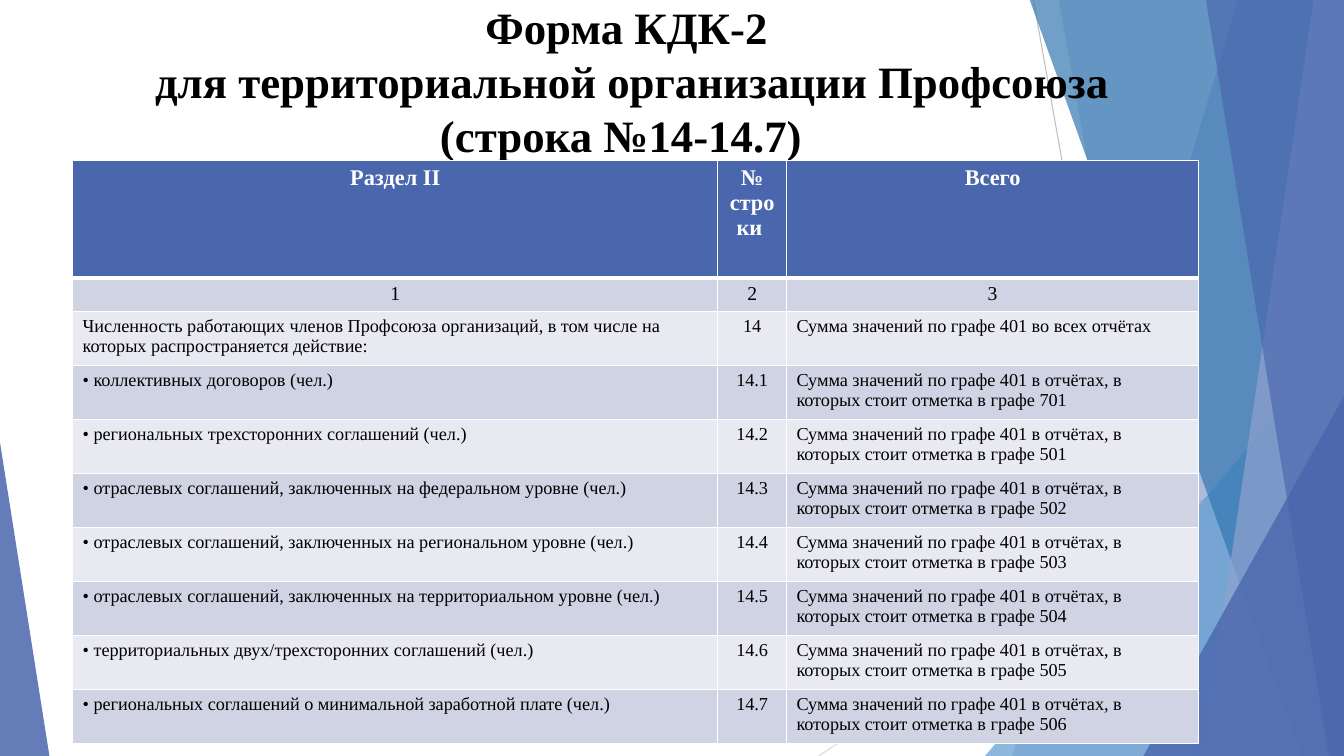
from pptx import Presentation
from pptx import util as u
from pptx.dml.color import RGBColor
from pptx.enum import shapes, text
from pptx.oxml.ns import qn
from lxml import etree

BLUE, WHITE, BLACK = "4A66AC", "FFFFFF", "000000"
BANDS = ["D0D3E3", "E9EAF1"]
FONT = "Times New Roman"
CENTER, LEFT = text.PP_ALIGN.CENTER, text.PP_ALIGN.LEFT
TOPICS = [
    "коллективных договоров",
    "региональных трехсторонних соглашений",
    "отраслевых соглашений, заключенных на федеральном уровне",
    "отраслевых соглашений, заключенных на региональном уровне",
    "отраслевых соглашений, заключенных на территориальном уровне",
    "территориальных двух/трехсторонних соглашений",
    "региональных соглашений о минимальной заработной плате",
]
MARKS = [701, 501, 502, 503, 504, 505, 506]


def color(hex):
    return RGBColor.from_string(hex)


def write(frame, words, size=13, bold=False, ink=BLACK, align=LEFT):
    para = frame.paragraphs[0]
    para.text = words
    para.alignment = align
    for run in para.runs:
        font = run.font
        font.name, font.size, font.bold = FONT, u.Pt(size), bold
        font.color.rgb = color(ink)


def paint(shape, fill, alpha):
    shape.shadow.inherit = False
    shape.fill.solid()
    shape.fill.fore_color.rgb = color(fill)
    shape.line.fill.background()
    tint = shape.fill._xPr.find(qn("a:solidFill"))[0]
    etree.SubElement(tint, qn("a:alpha"), val=str(alpha * 1000))


def line(slide, x1, y1, x2, y2, ink):
    rule = slide.shapes.add_connector(
        shapes.MSO_CONNECTOR.STRAIGHT, *map(u.Inches, (x1, y1, x2, y2)))
    rule.line.color.rgb = color(ink)
    rule.line.width = u.Pt(0.75)
    etree.SubElement(rule._element.spPr, qn("a:effectLst"))


def shard(slide, top, foot, right, base, fill, alpha):
    """Band from a slanted left edge to the right side of the slide."""
    y = -0.01
    pts = [(top, y), (right, y), (right, base), (foot, base)]
    pts = [(u.Inches(a), u.Inches(b)) for a, b in pts]
    build = slide.shapes.build_freeform(*pts[0], scale=1.0)
    build.add_line_segments(pts[1:], close=True)
    paint(build.convert_to_shape(), fill, alpha)


def wedge(slide, x, y, w, h, tip, fill, alpha):
    shape = slide.shapes.add_shape(
        shapes.MSO_SHAPE.ISOSCELES_TRIANGLE, *map(u.Inches, (x, y, w, h)))
    shape.adjustments[0] = tip
    paint(shape, fill, alpha)


def decor(slide, w, h):
    # Thin grey lines
    line(slide, 10.25, 0, 11.58, h, "BFBFBF")
    line(slide, w, 4.03, 8.12, h, "D9D9D9")
    # Translucent blue facets, back to front
    shard(slide, 12.28, 10.04, w, h, BLUE, 30)
    shard(slide, 10.5, 11.83, w, h, BLUE, 20)
    wedge(slide, w - 3.56, h - 4.17, 3.56, 4.17, 1, "629DD1", 72)
    shard(slide, 10.21, 12.91, w, h, "3477B2", 70)
    shard(slide, 13.03, 11.92, w, h, "90A2CF", 70)
    shard(slide, 11.96, 13.18, w, h, BLUE, 65)
    wedge(slide, w - 1.99, h - 3.57, 1.99, 3.57, 1, BLUE, 80)
    # Left corner
    wedge(slide, 0, h - 3.11, 0.49, 3.11, 0, BLUE, 85)


def heading(slide, x, y, w, h):
    title = slide.shapes.title
    title.left, title.top, title.width, title.height = map(u.Inches, (x, y, w, h))
    frame = title.text_frame
    frame.word_wrap = True
    frame.auto_size = text.MSO_AUTO_SIZE.NONE
    frame.vertical_anchor = text.MSO_ANCHOR.MIDDLE
    frame.margin_bottom = u.Inches(0.25)
    write(frame, "Форма КДК-2\v для территориальной организации Профсоюза "
          "(строка №14-14.7) ", size=32, bold=True, align=CENTER)


def border(cell, base):
    props = cell._tc.get_or_add_tcPr()
    for i, (side, width) in enumerate(zip("LRTB", (1, 1, 1, base))):
        edge = etree.Element(qn("a:ln" + side), w=str(u.Pt(width)))
        fill = etree.SubElement(edge, qn("a:solidFill"))
        etree.SubElement(fill, qn("a:srgbClr"), val=WHITE)
        props.insert(i, edge)


def grid(slide, x, y, w, h):
    rows = [
        ("Раздел II", "№ строки ", "Всего"),
        ("1", "2", "3"),
        ("Численность работающих членов Профсоюза организаций, в том числе "
         "на которых распространяется действие:", "14",
         "Сумма значений по графе 401 во всех отчётах"),
    ]
    for i, (topic, mark) in enumerate(zip(TOPICS, MARKS), 1):
        rows.append((f"• {topic} (чел.)", f"14.{i}",
                     "Сумма значений по графе 401 в отчётах, в которых "
                     f"стоит отметка в графе {mark}"))
    table = slide.shapes.add_table(
        len(rows), 3, *map(u.Inches, (x, y, w, h))).table
    for col, wide in zip(table.columns, (6.4, 0.68, w - 7.08)):
        col.width = u.Inches(wide)
    tops = [1.17, 0.33]
    rest = (h - sum(tops)) / (len(rows) - 2)
    for r, words in enumerate(rows):
        table.rows[r].height = u.Inches(tops[r] if r < 2 else rest)
        for c, word in enumerate(words):
            cell = table.cell(r, c)
            head = r == 0
            cell.fill.solid()
            cell.fill.fore_color.rgb = color(BLUE if head else BANDS[(r - 1) % 2])
            border(cell, 3 if head else 1)
            write(cell.text_frame, word, size=(16, 14)[r] if r < 2 else 13,
                  bold=head, ink=WHITE if head else BLACK,
                  align=CENTER if r < 2 or c == 1 else LEFT)


def main():
    deck = Presentation()
    w, h = 13.33, 7.5
    deck.slide_width, deck.slide_height = u.Inches(w), u.Inches(h)
    slide = deck.slides.add_slide(deck.slide_layouts[5])
    decor(slide, w, h)
    # Title goes in front of the facets
    tree = slide.shapes._spTree
    tree.append(slide.shapes.title._element)
    heading(slide, 0.96, 0.21, 10.51, 1.38)
    grid(slide, 0.72, 1.59, 11.17, 5.79)
    deck.save("out.pptx")


if __name__ == "__main__":
    main()
